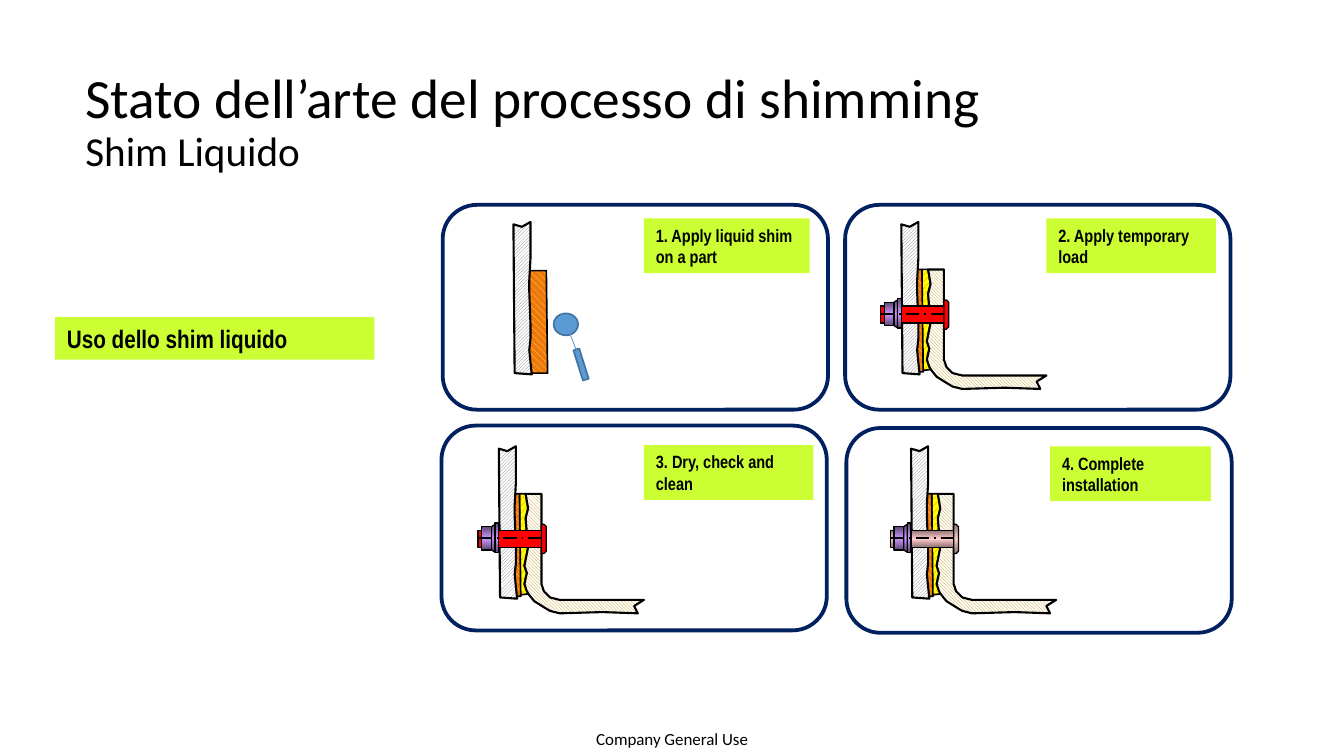
from copy import deepcopy
from dataclasses import dataclass

from pptx import Presentation
from pptx.dml.color import RGBColor
from pptx.enum.dml import MSO_LINE, MSO_PATTERN_TYPE as Pattern
from pptx.enum.shapes import MSO_CONNECTOR, MSO_SHAPE as Shape
from pptx.enum.text import MSO_ANCHOR, MSO_AUTO_SIZE, PP_ALIGN
from pptx.oxml.ns import qn
from pptx.util import Inches, Pt


@dataclass(frozen=True)
class Theme:
    black: str = "000000"
    navy: str = "002060"
    lime: str = "CCFF33"
    blue: str = "5B9BD5"
    blue_edge: str = "43739E"
    red: str = "FF0000"
    rose: tuple = ("8F7272", "FFCCCC", "8F7272")
    violet: tuple = ("5E4776", "CC99FF", "5E4776")
    steel: tuple = (Pattern.DARK_UPWARD_DIAGONAL, "7C7C7C", "FFFFFF")
    beige: tuple = (Pattern.DARK_DOWNWARD_DIAGONAL, "BF9000", "FFFFFF")
    orange: tuple = (Pattern.WIDE_DOWNWARD_DIAGONAL, "FFFF00", "EE7713")
    yellow: tuple = (Pattern.WIDE_UPWARD_DIAGONAL, "EE7713", "FFFF00")
    body_font: str = "Calibri"
    label_font: str = "Arial Narrow"
    title_size: float = 32.7
    subtitle_size: float = 24.3
    heading_size: float = 14.9
    step_size: float = 10.5
    footer_size: float = 10


THEME = Theme()

# Outlines in inches from the top left corner of the wall.
WALL = [(0, .02), (.07, .04), (.14, 0), (.14, .13), (.14, .3), (.13, .48), (.13, .57),
        (.14, .84), (.14, .96), (.13, 1.05), (.14, 1.15), (.15, 1.25), (.01, 1.24)]
WET_SHIM = [(.28, 1.24), (.27, .4), (.1, .4), (.08, .47), (.12, .84), (.1, .96),
            (.1, 1.15), (.14, 1.24)]
SHIM = [(.18, 1.23), (.17, .39), (.12, .39), (.11, .46), (.13, .82), (.12, .94),
        (.12, 1.04), (.13, 1.23)]
WAVY_SIDE = [(.22, .39), (.24, .51), (.22, .59), (.24, .83), (.21, .98), (.23, 1.04),
             (.21, 1.13)]
FILLER = WAVY_SIDE + [(.25, 1.21), (.17, 1.22), (.17, .39)]
BRACKET = WAVY_SIDE + [(.23, 1.19), (.25, 1.22), (.29, 1.27), (.37, 1.32), (.42, 1.35),
                       (.5, 1.37), (.85, 1.36), (1.14, 1.37), (1.11, 1.31), (1.19, 1.26),
                       (.5, 1.26), (.42, 1.24), (.37, 1.19), (.35, 1.13), (.35, .39)]
COLLAR = [(-.03, .64), (-.06, .66), (-.06, .85), (-.03, .87)]


def paint(shape, fill, edge=None, width=1):
    """Fill with a colour, three gradient stops or a pattern; None leaves it empty."""
    shape.shadow.inherit = False
    if fill is None:
        shape.fill.background()
    elif isinstance(fill, str):
        shape.fill.solid()
        shape.fill.fore_color.rgb = RGBColor.from_string(fill)
    elif isinstance(fill[0], str):
        paint_gradient(shape, fill)
    else:
        shape.fill.patterned()
        shape.fill.pattern, fore, back = fill
        shape.fill.fore_color.rgb = RGBColor.from_string(fore)
        shape.fill.back_color.rgb = RGBColor.from_string(back)
    if edge:
        shape.line.color.rgb = RGBColor.from_string(edge)
        shape.line.width = Pt(width)
    else:
        shape.line.fill.background()


def paint_gradient(shape, colors):
    shape.fill.gradient()
    shape.fill.gradient_angle = 0 if shape.rotation else 90
    stop_list = shape.element.spPr.find(qn("a:gradFill")).find(qn("a:gsLst"))
    stop_list.insert(1, deepcopy(stop_list[0]))
    for index, (stop, color) in enumerate(zip(shape.fill.gradient_stops, colors)):
        stop.position = index / (len(colors) - 1)
        stop.color.rgb = RGBColor.from_string(color)


def add_block(slide, kind, box, fill, edge=None, width=1, rotation=0):
    shape = slide.shapes.add_shape(kind, *map(Inches, box))
    shape.rotation = rotation
    paint(shape, fill, edge, width)
    return shape


def add_outline(slide, left, top, points, fill, width):
    corners = [(Inches(left + x), Inches(top + y)) for x, y in points]
    builder = slide.shapes.build_freeform(*corners[0])
    builder.add_line_segments(corners[1:], close=True)
    paint(builder.convert_to_shape(), fill, THEME.black, width)


def add_line(slide, start, end, color, width):
    line = slide.shapes.add_connector(MSO_CONNECTOR.STRAIGHT, *map(Inches, start + end))
    line.line.color.rgb = RGBColor.from_string(color)
    line.line.width = Pt(width)
    properties = line.element.spPr
    properties.append(properties.makeelement(qn("a:effectLst"), {}))
    return line


def style_font(span, name, size, bold=False):
    span.font.name = name
    span.font.size = Pt(size)
    span.font.bold = bold
    span.font.color.rgb = RGBColor.from_string(THEME.black)


def add_label(slide, box, text, size):
    frame = add_block(slide, Shape.RECTANGLE, box, THEME.lime).text_frame
    frame.text = text
    frame.word_wrap = True
    frame.vertical_anchor = MSO_ANCHOR.TOP
    para = frame.paragraphs[0]
    para.alignment = PP_ALIGN.LEFT
    style_font(para.runs[0], THEME.label_font, size, bold=True)


def add_title(slide, box, heading, subtitle):
    title = slide.shapes.title
    title.left, title.top, title.width, title.height = map(Inches, box)
    frame = title.text_frame
    frame.auto_size = MSO_AUTO_SIZE.NONE
    frame.vertical_anchor = MSO_ANCHOR.MIDDLE
    para = frame.paragraphs[0]
    para.text = f"{heading}\v{subtitle}"
    para.alignment = PP_ALIGN.LEFT
    para.line_spacing = 0.9
    for span, size in zip(para.runs, (THEME.title_size, THEME.subtitle_size)):
        style_font(span, THEME.body_font, size)


def add_footer(slide, box, text):
    frame = slide.shapes.add_textbox(*map(Inches, box)).text_frame
    frame.margin_left = frame.margin_right = frame.margin_top = frame.margin_bottom = 0
    frame.word_wrap = True
    frame.vertical_anchor = MSO_ANCHOR.MIDDLE
    frame.text = text
    frame.paragraphs[0].alignment = PP_ALIGN.CENTER
    style_font(frame.paragraphs[0].runs[0], THEME.body_font, THEME.footer_size)


def draw_application(slide, left, top):
    """Wall with fresh shim and the tool that spreads it."""
    add_outline(slide, left, top, WET_SHIM, THEME.orange, 1)
    add_outline(slide, left, top, WALL, THEME.steel, 1.25)
    add_block(slide, Shape.OVAL, (left + .33, top + .75, .2, .18), THEME.blue, THEME.blue_edge)
    add_line(slide, (left + .41, top + .78), (left + .55, top + 1.14), THEME.blue, .5)
    add_block(slide, Shape.RECTANGLE, (left + .53, top + 1.04, .05, .26),
              THEME.blue, THEME.blue_edge, rotation=342.4)


def draw_joint(slide, left, top, pin):
    """Wall, shim and bracket held by a fastener whose pin has the given fill."""
    for points, fill, width in ((FILLER, THEME.yellow, 1), (SHIM, THEME.orange, 1),
                                (BRACKET, THEME.beige, 1.25), (WALL, THEME.steel, 1.25)):
        add_outline(slide, left, top, points, fill, width)
    add_block(slide, Shape.RECTANGLE, (left - .17, top + .69, .54, .14), pin, THEME.black, .75)
    add_block(slide, Shape.SNIP_2_SAME_RECTANGLE, (left + .25, top + .74, .24, .04),
              pin, THEME.black, .75, rotation=90).adjustments[0] = .5
    add_outline(slide, left, top, COLLAR, THEME.violet, .75)
    for x, y, width, height in ((-.14, .66, .08, .19), (-.03, .63, .03, .24)):
        add_block(slide, Shape.RECTANGLE, (left + x, top + y, width, height),
                  THEME.violet, THEME.black, .75)
    axis = add_line(slide, (left - .17, top + .755), (left + .37, top + .755), THEME.black, 1)
    axis.line.dash_style = MSO_LINE.LONG_DASH_DOT


def add_step(slide, box, text, label_box, wall_at, pin=None):
    """Framed step; the label and wall positions are relative to the frame."""
    left, top = box[:2]
    add_block(slide, Shape.ROUNDED_RECTANGLE, box, None, THEME.navy, 2.25)
    x, y, width = label_box
    add_label(slide, (left + x, top + y, width, .45), text, THEME.step_size)
    wall = (left + wall_at[0], top + wall_at[1])
    if pin:
        draw_joint(slide, *wall, pin)
    else:
        draw_application(slide, *wall)


def main():
    deck = Presentation()
    deck.slide_width, deck.slide_height = Inches(11.02), Inches(6.2)
    page = deck.slides.add_slide(deck.slide_layouts[5])
    add_title(page, (.6, .69, 9.82, .64), "Stato dell’arte del processo di shimming", "Shim Liquido")
    add_label(page, (.45, 2.6, 2.62, .35), "Uso dello shim liquido", THEME.heading_size)
    steps = (
        (3.63, 1.68, "1. Apply liquid shim on a part", (1.65, .11, 1.36), (.58, .14), None),
        (6.93, 1.68, "2. Apply temporary load", (1.65, .11, 1.39), (.46, .14), THEME.red),
        (3.62, 3.49, "3. Dry, check and clean", (1.66, .16, 1.39), (.47, .17), THEME.red),
        (6.94, 3.51, "4. Complete installation", (1.67, .15, 1.32), (.53, .15), THEME.rose),
    )
    for left, top, *content in steps:
        add_step(page, (left, top, 3.16, 1.68), *content)
    add_footer(page, (4.72, 5.91, 1.58, .29), "Company General Use")
    deck.save("out.pptx")


if __name__ == "__main__":
    main()
